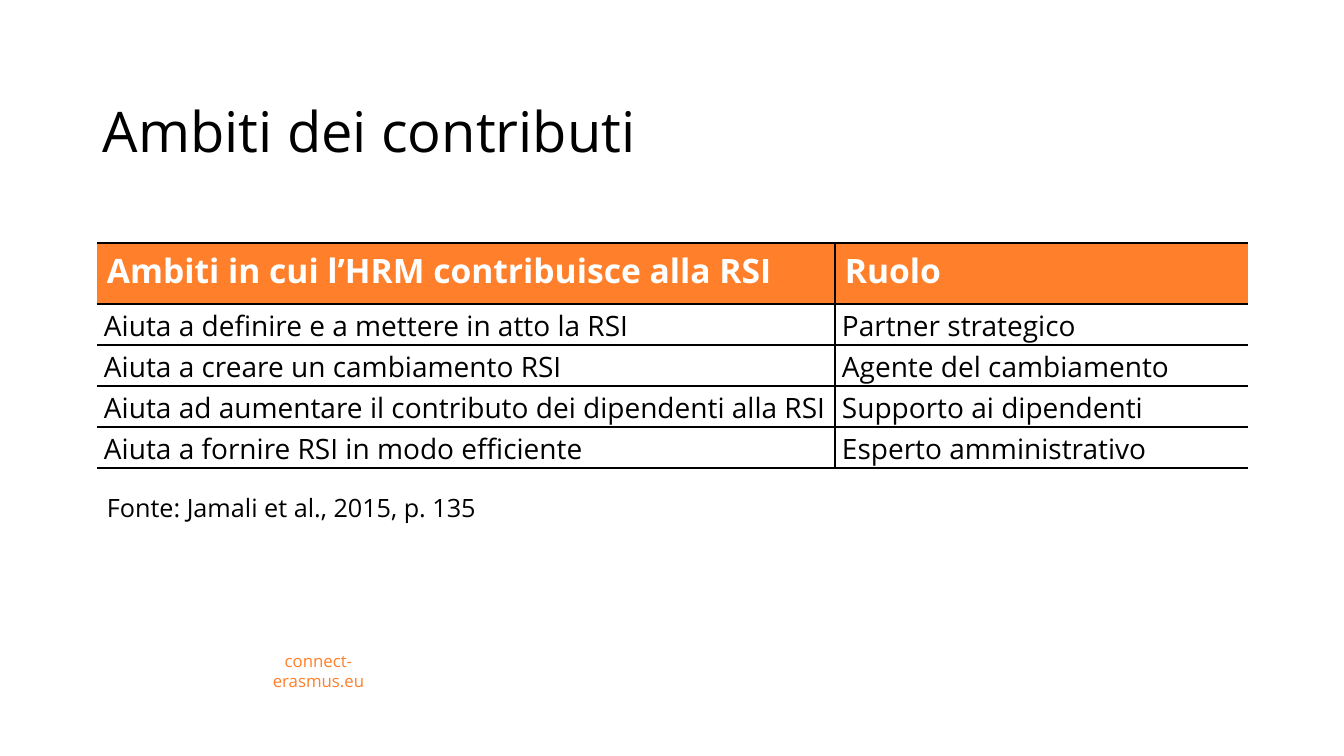
from lxml import etree
from pptx import Presentation
from pptx.dml.color import RGBColor
from pptx.enum.text import MSO_ANCHOR, PP_ALIGN
from pptx.oxml.ns import qn
from pptx.util import Pt

# Content
TITLE = "Ambiti dei contributi"
SOURCE = "Fonte: Jamali et al., 2015, p. 135"
FOOTER = "connect-erasmus.eu"
ROLES = [
    ("Ambiti in cui l’HRM contribuisce alla RSI", "Ruolo"),
    ("Aiuta a definire e a mettere in atto la RSI", "Partner strategico"),
    ("Aiuta a creare un cambiamento RSI", "Agente del cambiamento"),
    ("Aiuta ad aumentare il contributo dei dipendenti alla RSI", "Supporto ai dipendenti"),
    ("Aiuta a fornire RSI in modo efficiente", "Esperto amministrativo"),
]

THEME = {
    "font": "Open Sans",
    "black": "000000", "white": "FFFFFF", "orange": "FF7F2A",
    "title": 40, "header": 24, "body": 20, "source": 18, "footer": 12,
    "rule": 1,
}

# Geometry in px
SLIDE_SIZE = (1344, 756)
TITLE_BOX = (93, 85, 1159, 85)
SOURCE_BOX = (97, 487, 778, 40)
FOOTER_BOX = (230, 656, 177, 30)
TABLE_ORIGIN = (97, 243)
COLUMN_WIDTHS = (738, 413)
HEADER_HEIGHT, BODY_HEIGHT = 61, 41
HEADER_INSETS, BODY_INSETS = (10, 5), (7, 0)


def px(length):
    return round(length * 914400 / 100.8)


def apply_format(target, values):
    for name, value in values.items():
        setattr(target, name, value)


def write(frame, text, size, color, bold=False, **paragraph_format):
    paragraph = frame.paragraphs[0]
    apply_format(paragraph, paragraph_format)
    run = paragraph.add_run()
    run.text = text
    apply_format(run.font, {"name": THEME["font"], "size": Pt(THEME[size]), "bold": bold})
    run.font.color.rgb = RGBColor.from_string(THEME[color])


def add_text(slide, box, text, size, color, anchor=MSO_ANCHOR.TOP, **paragraph_format):
    frame = slide.shapes.add_textbox(*map(px, box)).text_frame
    apply_format(frame, {"word_wrap": True, "vertical_anchor": anchor})
    write(frame, text, size, color, **paragraph_format)


def set_borders(cell, visible):
    properties = cell._tc.get_or_add_tcPr()
    for position, side in enumerate("LRTB"):
        line = etree.Element(qn(f"a:ln{side}"), w=str(Pt(THEME["rule"])))
        if side in visible:
            fill = etree.SubElement(line, qn("a:solidFill"))
            etree.SubElement(fill, qn("a:srgbClr"), val=THEME["black"])
        else:
            etree.SubElement(line, qn("a:noFill"))
        properties.insert(position, line)


def fill_cell(cell, text, is_header, borders):
    side, top = map(px, HEADER_INSETS if is_header else BODY_INSETS)
    apply_format(cell, {"margin_left": side, "margin_right": side,
                        "margin_top": top, "margin_bottom": top})
    if is_header:
        cell.fill.solid()
        cell.fill.fore_color.rgb = RGBColor.from_string(THEME["orange"])
        write(cell.text_frame, text, "header", "white", bold=True)
    else:
        cell.fill.background()
        write(cell.text_frame, text, "body", "black", line_spacing=1.07)
    set_borders(cell, borders)


def add_roles_table(slide):
    heights = [HEADER_HEIGHT] + [BODY_HEIGHT] * (len(ROLES) - 1)
    box = (*TABLE_ORIGIN, sum(COLUMN_WIDTHS), sum(heights))
    table = slide.shapes.add_table(len(ROLES), len(COLUMN_WIDTHS), *map(px, box)).table
    apply_format(table, {"first_row": False, "horz_banding": False})
    for column, width in zip(table.columns, COLUMN_WIDTHS):
        column.width = px(width)
    for row, height, texts in zip(table.rows, heights, ROLES):
        row.height = px(height)
        for cell, text, borders in zip(row.cells, texts, ("RTB", "LTB")):
            fill_cell(cell, text, texts is ROLES[0], borders)


def main():
    presentation = Presentation()
    presentation.slide_width, presentation.slide_height = map(px, SLIDE_SIZE)
    slide = presentation.slides.add_slide(presentation.slide_layouts[6])

    # Title, source and footer
    add_text(slide, TITLE_BOX, TITLE, "title", "black", MSO_ANCHOR.BOTTOM, line_spacing=0.9)
    add_text(slide, SOURCE_BOX, SOURCE, "source", "black")
    add_text(slide, FOOTER_BOX, FOOTER, "footer", "orange", MSO_ANCHOR.MIDDLE,
             alignment=PP_ALIGN.CENTER)

    # Areas and roles
    add_roles_table(slide)
    presentation.save("out.pptx")


if __name__ == "__main__":
    main()
